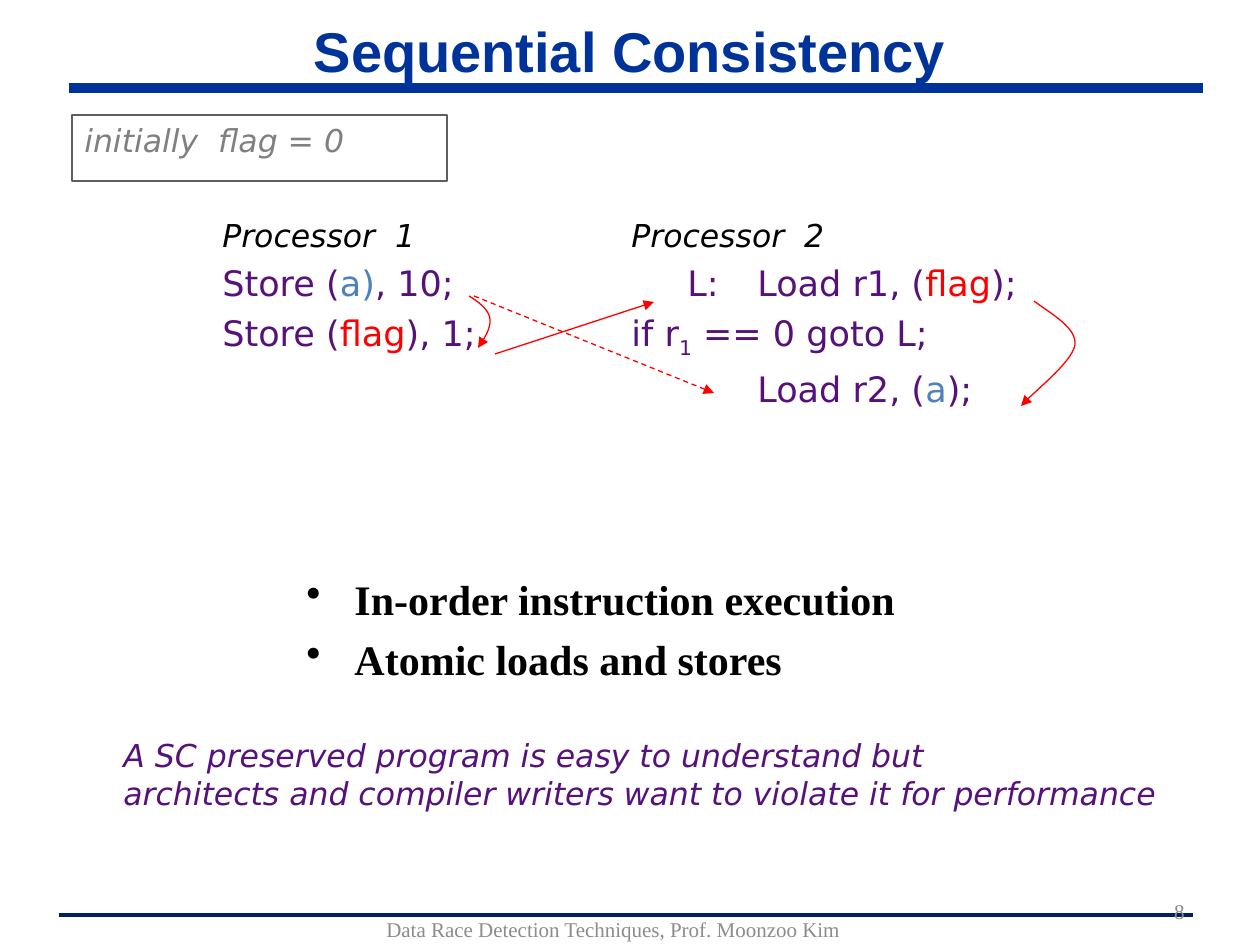
import dataclasses
import typing

import pptx
import pptx.dml.color
import pptx.enum.dml
import pptx.enum.shapes
import pptx.enum.text
import pptx.oxml
import pptx.util
from pptx.oxml.ns import qn

EMU_PER_PX = 914400 / 126
ALIGN = pptx.enum.text.PP_ALIGN
ANCHOR = pptx.enum.text.MSO_ANCHOR


@dataclasses.dataclass(frozen=True)
class Theme:
    blue: str = "003399"
    navy: str = "002060"
    purple: str = "56127A"
    address: str = "4F81BD"
    red: str = "FF0000"
    black: str = "000000"
    gray: str = "808080"
    frame: str = "5F5F5F"
    footer: str = "8C8C8C"
    title_size: int = 32
    bullet_size: int = 24
    code_size: int = 20
    label_size: int = 18
    footer_size: int = 12
    heading_font: str = "Arial"
    code_font: str = "DejaVu Sans"
    body_font: str = "Times New Roman"


THEME = Theme()


@dataclasses.dataclass(frozen=True)
class Run:
    text: str
    color: str = THEME.purple
    size: int = THEME.code_size
    font: str = THEME.code_font
    bold: bool = False
    italic: bool = False
    subscript: bool = False


@dataclasses.dataclass(frozen=True)
class Line:
    runs: tuple[Run, ...]
    margin: int = 0
    indent: int = 0
    bullet: str = ""


@dataclasses.dataclass(frozen=True)
class TextBlock:
    box: tuple[int, int, int, int]
    lines: tuple[Line, ...]
    align: ALIGN = ALIGN.LEFT
    anchor: ANCHOR = ANCHOR.TOP
    gap: float = 0
    wrap: bool = True
    frame: str = ""


@dataclasses.dataclass(frozen=True)
class Stroke:
    start: tuple[int, int]
    end: tuple[int, int]
    color: str = THEME.red
    width: float = 0.75
    arrow: bool = True
    dashed: bool = False


@dataclasses.dataclass(frozen=True)
class Curve:
    start: tuple[int, int]
    segments: tuple[tuple[tuple[int, int], ...], ...]


def px(value: float) -> pptx.util.Emu:
    return pptx.util.Emu(round(value * EMU_PER_PX))


def rgb(value: str) -> pptx.dml.color.RGBColor:
    return pptx.dml.color.RGBColor.from_string(value)


def label(text: str, color: str) -> Line:
    return Line((Run(text, color, THEME.label_size, italic=True),))


def body(text: str, color: str, size: int, bold: bool = False) -> Run:
    return Run(text, color, size, THEME.body_font, bold)


def bullet(text: str) -> Line:
    return Line((body(text, THEME.black, THEME.bullet_size, True),), 48, -48, "•")


def add_run(paragraph: typing.Any, run: Run) -> None:
    part = paragraph.add_run()
    part.text = run.text
    part.font.name = run.font
    part.font.size = pptx.util.Pt(run.size)
    part.font.bold = run.bold
    part.font.italic = run.italic
    part.font.color.rgb = rgb(run.color)
    if run.subscript:
        part.font._element.set("baseline", "-25000")


def draw_text(slide: typing.Any, block: TextBlock) -> None:
    box = [px(value) for value in block.box]
    if block.frame:
        shape = slide.shapes.add_shape(pptx.enum.shapes.MSO_SHAPE.RECTANGLE, *box)
        shape.shadow.inherit = False
        shape.fill.background()
        shape.line.color.rgb = rgb(block.frame)
        shape.line.width = pptx.util.Pt(1)
    else:
        shape = slide.shapes.add_textbox(*box)
    frame = shape.text_frame
    frame.word_wrap = block.wrap
    frame.vertical_anchor = block.anchor
    for index, line in enumerate(block.lines):
        paragraph = frame.add_paragraph() if index else frame.paragraphs[0]
        paragraph.alignment = block.align
        paragraph.space_before = pptx.util.Pt(block.gap if index else 0)
        properties = paragraph._element.get_or_add_pPr()
        properties.set("marL", str(px(line.margin)))
        properties.set("indent", str(px(line.indent)))
        if line.bullet:
            mark = pptx.oxml.parse_xml(
                '<a:buChar xmlns:a="http://schemas.openxmlformats.org/drawingml/2006/main"/>')
            mark.set("char", line.bullet)
            properties.append(mark)
        for run in line.runs:
            add_run(paragraph, run)


def style_stroke(shape: typing.Any, color: str, width: float, arrow: bool) -> None:
    shape.line.color.rgb = rgb(color)
    shape.line.width = pptx.util.Pt(width)
    if arrow:
        tail = shape.line._get_or_add_ln().makeelement(qn("a:tailEnd"), {"type": "triangle"})
        shape.line._get_or_add_ln().append(tail)


def draw_stroke(slide: typing.Any, stroke: Stroke) -> None:
    connector = slide.shapes.add_connector(
        pptx.enum.shapes.MSO_CONNECTOR.STRAIGHT,
        *[px(value) for value in stroke.start + stroke.end])
    if stroke.dashed:
        connector.line.dash_style = pptx.enum.dml.MSO_LINE.DASH
    style_stroke(connector, stroke.color, stroke.width, stroke.arrow)
    properties = connector._element.spPr
    properties.append(properties.makeelement(qn("a:effectLst"), {}))


def draw_curve(slide: typing.Any, curve: Curve, steps: int = 16) -> None:
    points, start = [], curve.start
    for first, second, end in curve.segments:
        for step in range(1, steps + 1):
            t = step / steps
            weights = ((1 - t) ** 3, 3 * t * (1 - t) ** 2, 3 * t * t * (1 - t), t ** 3)
            controls = (start, first, second, end)
            points.append(tuple(
                px(sum(weight * point[axis] for weight, point in zip(weights, controls)))
                for axis in (0, 1)))
        start = end
    builder = slide.shapes.build_freeform(*[px(value) for value in curve.start])
    builder.add_line_segments(points, close=False)
    shape = builder.convert_to_shape()
    shape.shadow.inherit = False
    shape.fill.background()
    style_stroke(shape, THEME.red, 0.75, True)


RULES = (
    Stroke((59, 915), (1193, 915), THEME.navy, 2.25, arrow=False),
    Stroke((69, 88), (1203, 88), THEME.blue, 6, arrow=False),
)
TEXTS = (
    TextBlock((330, 908, 567, 42), (Line((body(
        "Data Race Detection Techniques, Prof. Moonzoo Kim", THEME.footer, THEME.footer_size),)),),
        ALIGN.CENTER, ANCHOR.MIDDLE),
    TextBlock((63, 20, 1134, 60), (Line((Run(
        "Sequential Consistency", THEME.blue, THEME.title_size, THEME.heading_font, True),)),),
        ALIGN.CENTER, ANCHOR.MIDDLE),
    TextBlock((294, 567, 790, 144), (
        bullet("In-order instruction execution"), bullet("Atomic loads and stores")), gap=5.75),
    TextBlock((111, 730, 1071, 89), (
        label("A SC preserved program is easy to understand but", THEME.purple),
        label("architects and compiler writers want to violate it for performance", THEME.purple)),
        wrap=False),
    TextBlock((210, 210, 380, 242), (
        label("Processor  1", THEME.black),
        Line((Run("Store ("), Run("a)", THEME.address), Run(", 10;"))),
        Line((Run("Store ("), Run("flag", THEME.red), Run("), 1;")))), gap=4.5),
    TextBlock((619, 210, 589, 242), (
        label("Processor  2", THEME.black),
        Line((Run("L:\tLoad r1, ("), Run("flag", THEME.red), Run(");")), 126, -70),
        Line((Run("if r"), Run("1", subscript=True), Run(" == 0 goto L;"))),
        Line((Run("Load r2, ("), Run("a", THEME.address), Run(");")), 126)), gap=4.5),
    TextBlock((72, 115, 375, 66), (label("initially  flag = 0", THEME.gray),),
              wrap=False, frame=THEME.frame),
    TextBlock((903, 896, 294, 30), (Line((body("8", THEME.footer, THEME.footer_size),)),),
              ALIGN.RIGHT, ANCHOR.MIDDLE),
)
ARROWS = (
    Stroke((495, 354), (654, 302)),
    Stroke((474, 296), (714, 393), dashed=True),
)
CURVES = (
    Curve((469, 296), (((479, 302), (489, 310), (490, 319)), ((491, 328), (485, 338), (478, 348)))),
    Curve((1034, 301), (((1053, 315), (1077, 328), (1075, 345)),
                        ((1072, 363), (1032, 393), (1021, 406)))),
)


def main() -> None:
    presentation = pptx.Presentation()
    presentation.slide_width, presentation.slide_height = px(1260), px(945)
    slide = presentation.slides.add_slide(presentation.slide_layouts[6])
    for rule in RULES:
        draw_stroke(slide, rule)
    for block in TEXTS:
        draw_text(slide, block)
    for arrow in ARROWS:
        draw_stroke(slide, arrow)
    for curve in CURVES:
        draw_curve(slide, curve)
    presentation.save("out.pptx")


if __name__ == "__main__":
    main()
